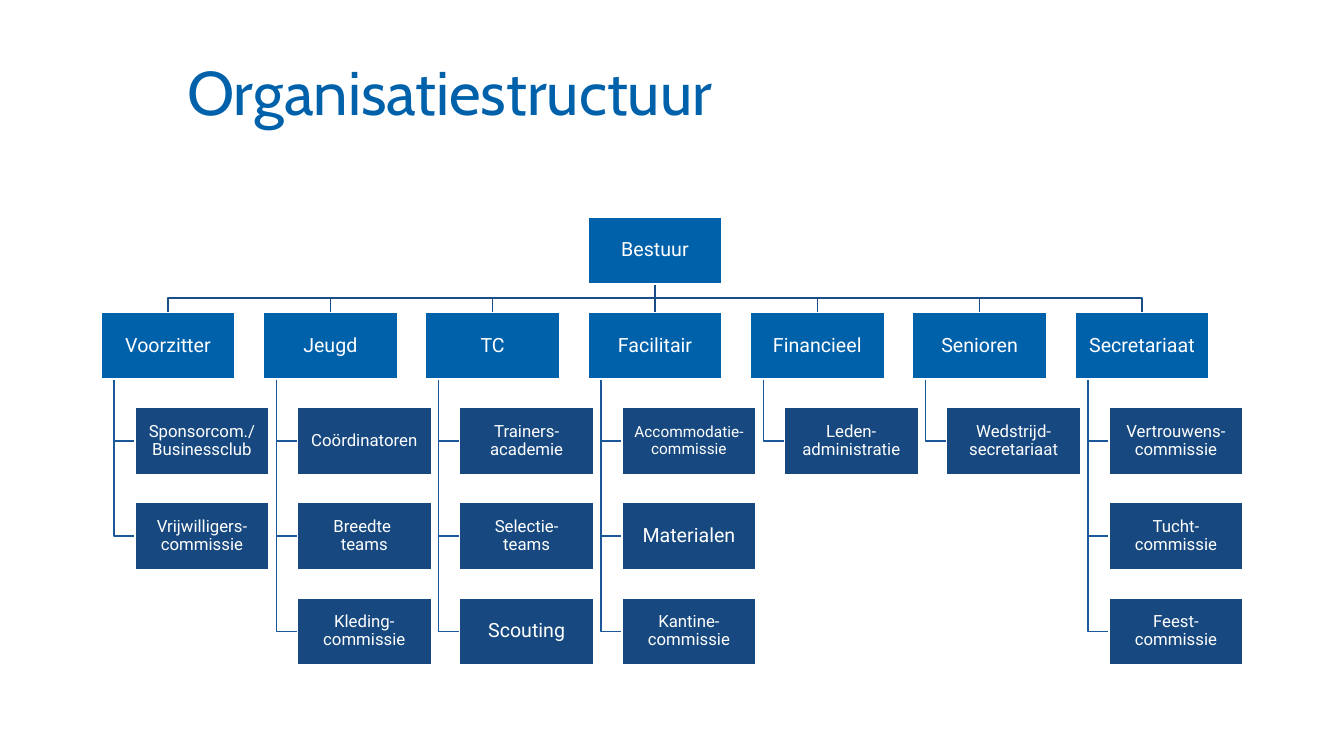
from dataclasses import dataclass

from pptx import Presentation
from pptx.dml.color import RGBColor
from pptx.enum.shapes import MSO_CONNECTOR, MSO_SHAPE
from pptx.enum.text import MSO_ANCHOR, MSO_AUTO_SIZE, PP_ALIGN
from pptx.oxml.ns import qn
from pptx.util import Pt
from lxml.etree import SubElement

# Content: a leaf is its text, or its text with a size name
TITLE = "Organisatiestructuur"
ROOT = "Bestuur"
TEAMS = [
    ("Voorzitter", ["Sponsorcom./\nBusinessclub", "Vrijwilligers-commissie"]),
    ("Jeugd", ["Coördinatoren", "Breedte \nteams", "Kleding-commissie"]),
    ("TC", ["Trainers-academie", "Selectie-\nteams", ("Scouting", "head")]),
    ("Facilitair", [("Accommodatie-commissie", "small"), ("Materialen", "head"),
                    "Kantine-\ncommissie"]),
    ("Financieel", ["Leden-administratie"]),
    ("Senioren", ["Wedstrijd-secretariaat"]),
    ("Secretariaat", ["Vertrouwens-commissie", "Tucht-\ncommissie", "Feest-\ncommissie"]),
]


@dataclass(frozen=True)
class Theme:
    blue: str = "0061AB"
    navy: str = "174980"
    trunk: str = "184E88"
    twig: str = "1B589A"
    white: str = "FFFFFF"
    title_font: str = "Cabin"
    body_font: str = "Roboto"
    title: int = 44
    head: int = 14
    leaf: int = 12
    small: int = 11
    rule: int = 1


THEME = Theme()

# Layout in px
SCALE = 914400 / 100.8
WIDE, HIGH = 1344, 756
LEFT, TOP = 101, 217
BOX_W, BOX_H = 134, 67
COL = 974 / (len(TEAMS) - 1)
ROW = 381 / 4
STEM, INDENT = 13, 34


def px(num):
    return round(num * SCALE)


def paint(font, face, size, hue):
    font.name = face
    font.size = Pt(size)
    font.color.rgb = RGBColor.from_string(hue)


def trace(line, hue):
    line.color.rgb = RGBColor.from_string(hue)
    line.width = Pt(THEME.rule)


def add_path(shapes, points, hue):
    start, *rest = [(px(x), px(y)) for x, y in points]
    form = shapes.build_freeform(*start)
    form.add_line_segments(rest, close=False)
    shape = form.convert_to_shape()
    shape.shadow.inherit = False
    shape.fill.background()
    trace(shape.line, hue)


def add_box(shapes, text, x, y, fill, size):
    box = shapes.add_shape(MSO_SHAPE.RECTANGLE, px(x), px(y), px(BOX_W), px(BOX_H))
    box.shadow.inherit = False
    box.fill.solid()
    box.fill.fore_color.rgb = RGBColor.from_string(fill)
    trace(box.line, THEME.white)
    frame = box.text_frame
    frame.word_wrap = True
    frame.vertical_anchor = MSO_ANCHOR.MIDDLE
    frame.margin_left = frame.margin_right = px(1)
    frame.margin_top = frame.margin_bottom = px(1)
    para = frame.paragraphs[0]
    para.alignment = PP_ALIGN.CENTER
    para.line_spacing = 0.9
    for num, part in enumerate(text.split("\n")):
        if num:
            para.add_line_break()
        run = para.add_run()
        run.text = part
        paint(run.font, THEME.body_font, size, THEME.white)
    return box


def add_title(slide):
    head = slide.shapes.title
    head.left, head.top, head.width, head.height = map(px, (177, 27, 1075, 137))
    frame = head.text_frame
    frame.auto_size = MSO_AUTO_SIZE.NONE
    frame.vertical_anchor = MSO_ANCHOR.MIDDLE
    para = frame.paragraphs[0]
    para.alignment = PP_ALIGN.LEFT
    para.line_spacing = 0.9
    run = para.add_run()
    run.text = TITLE
    paint(run.font, THEME.title_font, THEME.title, THEME.blue)


def add_chart(shapes):
    mid = len(TEAMS) // 2
    root_x = LEFT + mid * COL
    hub = root_x + BOX_W / 2
    base, head_y = TOP + BOX_H, TOP + ROW
    bus = (base + head_y) / 2

    # Lines, behind the boxes
    for col, (_, leaves) in enumerate(TEAMS):
        x = LEFT + col * COL
        if col != mid:
            end = x + BOX_W / 2
            add_path(shapes, [(hub, base), (hub, bus), (end, bus), (end, head_y)],
                     THEME.trunk)
        for row in range(len(leaves)):
            y = TOP + (row + 2) * ROW + BOX_H / 2
            add_path(shapes, [(x + STEM, head_y + BOX_H), (x + STEM, y), (x + INDENT, y)],
                     THEME.twig)
    trunk = shapes.add_connector(MSO_CONNECTOR.STRAIGHT, px(hub), px(base),
                                 px(hub), px(head_y))
    trace(trunk.line, THEME.trunk)
    SubElement(trunk._element.spPr, qn("a:effectLst"))

    # Boxes
    root = add_box(shapes, ROOT, root_x, TOP, THEME.blue, THEME.head)
    trunk.begin_connect(root, 2)
    for col, (name, leaves) in enumerate(TEAMS):
        x = LEFT + col * COL
        head = add_box(shapes, name, x, head_y, THEME.blue, THEME.head)
        if col == mid:
            trunk.end_connect(head, 0)
        for row, leaf in enumerate(leaves):
            text, size = (leaf, "leaf") if isinstance(leaf, str) else leaf
            add_box(shapes, text, x + INDENT, TOP + (row + 2) * ROW, THEME.navy,
                    getattr(THEME, size))


def main():
    deck = Presentation()
    deck.slide_width, deck.slide_height = px(WIDE), px(HIGH)
    slide = deck.slides.add_slide(deck.slide_layouts[5])
    add_title(slide)
    add_chart(slide.shapes)
    deck.save("out.pptx")


if __name__ == "__main__":
    main()
